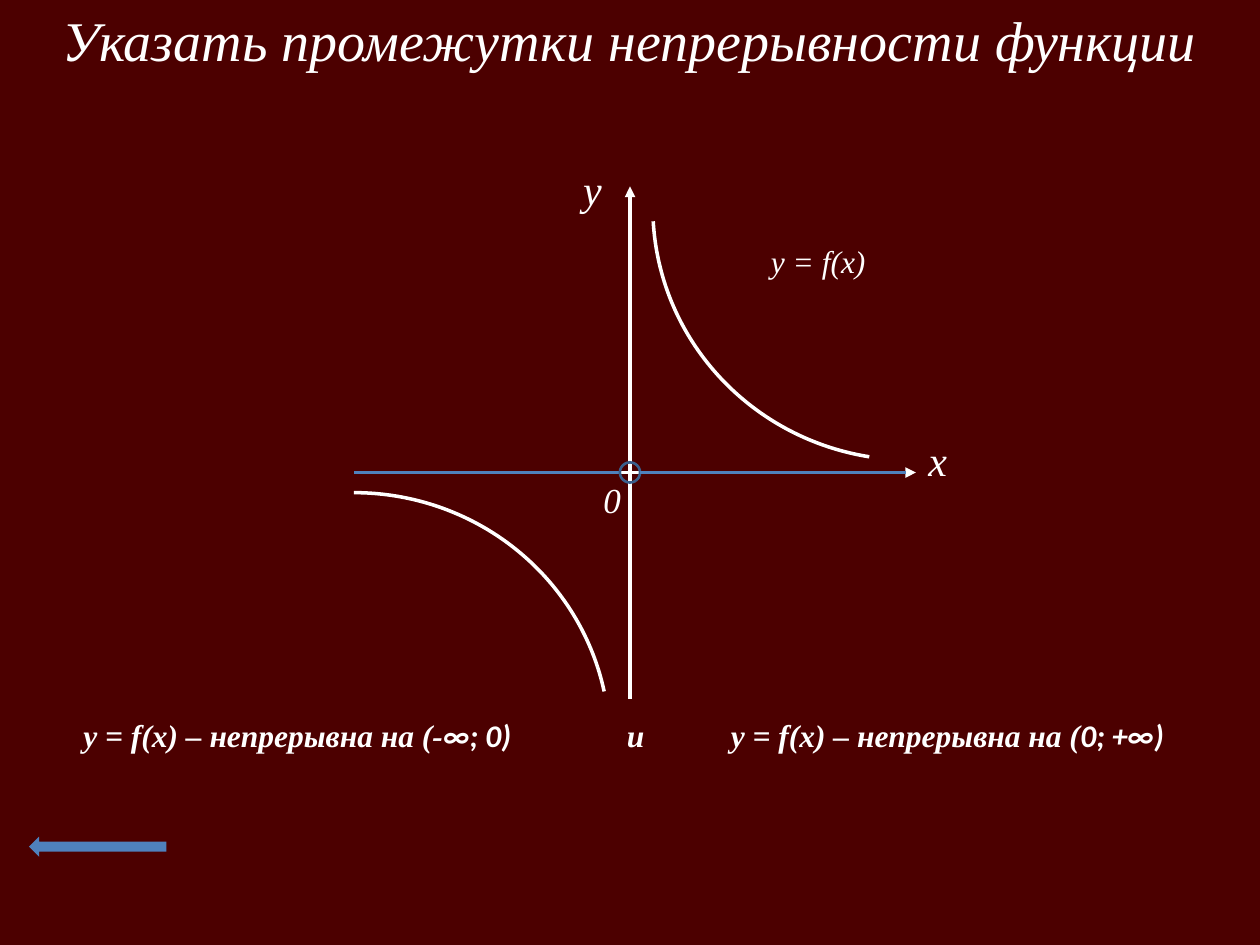
from lxml import etree
from pptx import Presentation
from pptx.dml.color import RGBColor
from pptx.enum.shapes import MSO_CONNECTOR, MSO_SHAPE
from pptx.enum.text import MSO_ANCHOR, MSO_AUTO_SIZE, PP_ALIGN
from pptx.oxml.ns import qn
from pptx.util import Inches, Pt

DARK = RGBColor(0x4C, 0x00, 0x00)
WHITE = RGBColor(0xFF, 0xFF, 0xFF)
BLUE = RGBColor(0x4F, 0x81, 0xBD)
NAVY = RGBColor(0x3A, 0x5F, 0x8C)

STRAIGHT = MSO_CONNECTOR.STRAIGHT
ARC, RING, ARROW = MSO_SHAPE.ARC, MSO_SHAPE.OVAL, MSO_SHAPE.LEFT_ARROW
CENTER, LEFT = PP_ALIGN.CENTER, PP_ALIGN.LEFT
MIDDLE, TOP = MSO_ANCHOR.MIDDLE, MSO_ANCHOR.TOP
GROW = MSO_AUTO_SIZE.SHAPE_TO_FIT_TEXT

SERIF, SANS = "Times New Roman", "Calibri"
MID_X, MID_Y = 5, 3.75  # origin of the graph
GAP = 0.08              # radius of the open point


def add_text(slide, box, runs, size, align=LEFT, anchor=TOP,
             bold=None, wrap=True, right=0.1):
    frame = slide.shapes.add_textbox(*map(Inches, box)).text_frame
    frame.word_wrap = wrap
    frame.auto_size = GROW
    frame.vertical_anchor = anchor
    frame.margin_right = Inches(right)
    para = frame.paragraphs[0]
    para.alignment = align
    for text, face in runs:
        run = para.add_run()
        run.text = text
        font = run.font
        font.name, font.size = face, Pt(size)
        font.bold, font.italic = bold, True
        font.color.rgb = WHITE


def add_line(slide, start, end, color, head=False):
    line = slide.shapes.add_connector(STRAIGHT, *map(Inches, start + end))
    line.line.color.rgb = color
    line.line.width = Pt(2)
    if head:
        etree.SubElement(line.line._get_or_add_ln(), qn("a:headEnd"),
                         type="triangle")
    etree.SubElement(line._element.spPr, qn("a:effectLst"))


def add_shape(slide, kind, box, fill=None, color=None, width=2):
    shape = slide.shapes.add_shape(kind, *map(Inches, box))
    shape.shadow.inherit = False
    if fill is None:
        shape.fill.background()
    else:
        shape.fill.solid()
        shape.fill.fore_color.rgb = fill
    if color is None:
        shape.line.fill.background()
    else:
        shape.line.color.rgb = color
        shape.line.width = Pt(width)
    return shape


def add_curve(slide, left, top, turn=0):
    curve = add_shape(slide, ARC, (left, top, 4.06, 3.98), color=WHITE)
    curve.adjustments[0] = 162      # 270 degrees
    curve.adjustments[1] = 208.961  # about 348 degrees
    curve.rotation = turn


def main():
    deck = Presentation()
    deck.slide_width, deck.slide_height = Inches(10), Inches(7.5)
    slide = deck.slides.add_slide(deck.slide_layouts[6])
    slide.background.fill.solid()
    slide.background.fill.fore_color.rgb = DARK

    # Title
    add_text(slide, (0, -0.01, 10, 0.64),
             [("Указать промежутки непрерывности функции", SERIF)],
             32, CENTER, MIDDLE)

    # Axes and their labels
    add_line(slide, (MID_X, 1.48), (MID_X, 5.55), WHITE, head=True)
    add_line(slide, (7.27, MID_Y), (2.81, MID_Y), WHITE, head=True)
    for text, left, top, high, size in (("x", 7.27, 3.4, 0.5, 24),
                                        ("0", 4.69, 3.75, 0.44, 20),
                                        ("y", 4.53, 1.25, 0.5, 24)):
        add_text(slide, (left, top, 0.55, high), [(text, SERIF)], size)
    add_text(slide, (6.02, 1.87, 0.96, 0.4), [("y = f(x)", SERIF)],
             18, wrap=False)

    # Two branches of the graph
    add_curve(slide, 0.78, 3.91)
    add_curve(slide, 5.18, -0.33, turn=189)

    # Marked intervals around the open point
    add_line(slide, (2.81, MID_Y), (MID_X - GAP, MID_Y), BLUE)
    add_shape(slide, RING, (MID_X - GAP, MID_Y - GAP, 2 * GAP, 2 * GAP),
              color=NAVY, width=1.5)
    add_line(slide, (MID_X + GAP, MID_Y), (7.19, MID_Y), BLUE)

    # Answer
    lead = "y = f(x) – непрерывна на ("
    for left, wide, runs, right in (
            (0.47, 3.91, [(lead + "-", SERIF), ("∞; 0)", SANS)], 0.23),
            (4.77, 0.55, [("и", SERIF)], 0.1),
            (5.63, 3.91, [(lead, SERIF), ("0; +∞)", SANS)], 0.23)):
        add_text(slide, (left, 5.63, wide, 0.4), runs, 18, CENTER,
                 bold=True, right=right)

    # Back arrow
    add_shape(slide, ARROW, (0.23, 6.64, 1.09, 0.16), fill=BLUE)

    deck.save("out.pptx")


if __name__ == "__main__":
    main()
